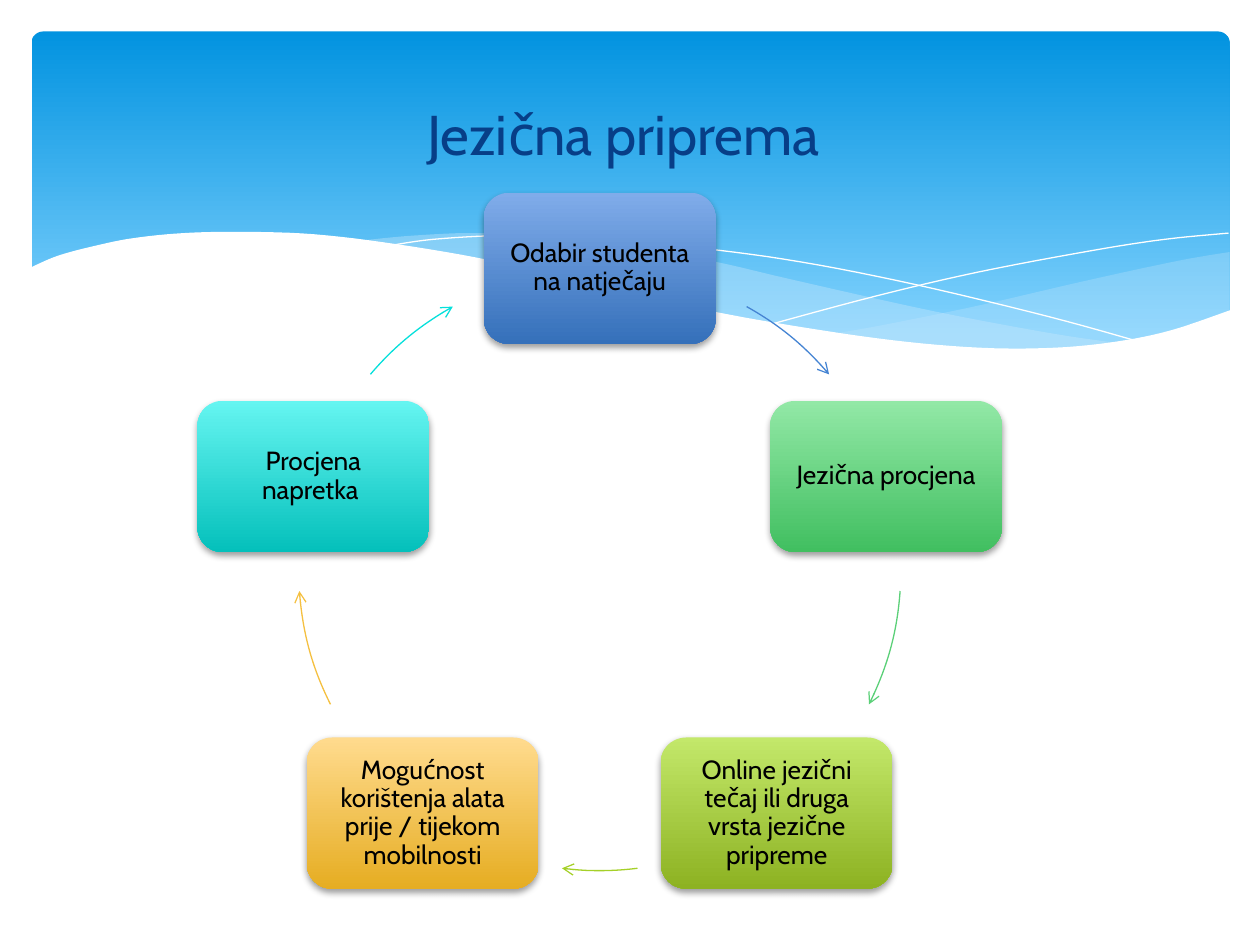
from math import cos, radians, sin

from lxml import etree
from pptx import Presentation
from pptx import util as u
from pptx.dml.color import RGBColor
from pptx.enum import shapes, text
from pptx.oxml.ns import qn

PX = 9144
FONT = "Cabin"
COLORS = {
    "sky": "0293E0", "haze": "83D3FE", "mist": "C6E7FC", "white": "FFFFFF",
    "navy": "073E87", "black": "000000",
}
MID = (476, 452)
RADIUS = 239
BOX = (184, 120)
STEPS = [
    ("Odabir studenta na natječaju", "80ACEA", "3570BA", "4584D3", (29.2, 49.6)),
    ("Jezična procjena", "92E8A6", "41BF60", "5BD078", (94.1, 116.6)),
    ("Online jezični tečaj ili druga vrsta jezične pripreme",
     "C3E86A", "8DB222", "A5D028", (172.8, 187.2)),
    ("Mogućnost korištenja alata prije / tijekom mobilnosti",
     "FFDB8E", "E6AD22", "F5C040", (243.4, 265.9)),
    ("Procjena napretka ", "65F5F1", "04C0BB", "05E0DB", (310.4, 330.8)),
]
EAST = [
    [(976, 200), (935, 207), (861, 223), (779, 242), (706, 257), (661, 265)],
    [(661, 265), (705, 271), (757, 275), (803, 278), (854, 276), (897, 270),
     (935, 262), (976, 247)],
]
WEST = [
    [(893, 273), (837, 265), (741, 247), (629, 222), (569, 208), (502, 196),
     (442, 189), (380, 185), (328, 187), (286, 191)],
    [(286, 191), (342, 199), (404, 211), (491, 232), (584, 252), (650, 264),
     (722, 274), (785, 278), (838, 278), (893, 273)],
]
FALL = [(309, 195), (344, 190), (401, 187), (469, 189), (556, 197), (636, 208),
        (727, 226), (831, 251), (907, 272)]
RISE = [(613, 257), (695, 235), (776, 216), (866, 199), (924, 190), (975, 185)]
CREST = [
    [(977, 246), (930, 262), (887, 271), (837, 276), (778, 276), (708, 270),
     (626, 258), (555, 245), (475, 227), (391, 207), (316, 194), (250, 186),
     (193, 184), (146, 185), (106, 189), (76, 195), (46, 203), (23, 213)],
    [(23, 329), (977, 329)],
]


def rgb(hue):
    """Return the colour of a hex string."""
    return RGBColor.from_string(hue)


def shade(shape, top, end, stop=1.0):
    """Fill a shape from top to bottom with two colours."""
    fill = shape.fill
    fill.gradient()
    fill.gradient_angle = 270
    for item, hue, pos in zip(fill.gradient_stops, (top, end), (0, stop)):
        item.color.rgb = rgb(hue)
        item.position = pos
    shape.line.fill.background()


def smooth(pts, cuts=6):
    """Return a Catmull-Rom curve through the points."""
    ring = [pts[0], *pts, pts[-1]]
    path = [pts[0]]
    for a, b, c, d in zip(ring, ring[1:], ring[2:], ring[3:]):
        for k in range(1, cuts + 1):
            t = k / cuts
            path.append(tuple(
                0.5 * (2 * q + (r - p) * t + (2 * p - 5 * q + 4 * r - s) * t ** 2
                       + (3 * q - p - 3 * r + s) * t ** 3)
                for p, q, r, s in zip(a, b, c, d)))
    return path


def trace(slide, parts, closed):
    """Draw a freeform along smooth parts."""
    path = [(x * PX, y * PX) for part in parts for x, y in smooth(part)]
    pen = slide.shapes.build_freeform(*path[0])
    pen.add_line_segments(path[1:], close=closed)
    shape = pen.convert_to_shape()
    shape.shadow.inherit = False
    return shape


def wave(slide, parts, hue, alpha=100):
    """Add a filled wave."""
    shape = trace(slide, parts, True)
    shape.line.fill.background()
    shape.fill.solid()
    shape.fill.fore_color.rgb = rgb(hue)
    tint = shape._element.spPr.find(qn("a:solidFill"))[0]
    etree.SubElement(tint, qn("a:alpha"), val=str(alpha * 1000))


def thread(slide, pts):
    """Add a white hairline."""
    shape = trace(slide, [pts], False)
    shape.fill.background()
    shape.line.color.rgb = rgb(COLORS["white"])
    shape.line.width = u.Pt(0)


def preset(slide, kind, x, y, w, h):
    """Add a preset shape without the theme shadow."""
    shape = slide.shapes.add_shape(kind, *(round(v * PX) for v in (x, y, w, h)))
    shape.shadow.inherit = False
    return shape


def banner(slide):
    """Add the sky with its waves."""
    sky = preset(slide, shapes.MSO_SHAPE.ROUNDED_RECTANGLE, 25, 25, 951, 270)
    sky.adjustments[0] = 0.034
    shade(sky, COLORS["sky"], COLORS["haze"], 0.9)
    wave(slide, EAST, COLORS["mist"], 29)
    wave(slide, WEST, COLORS["mist"], 40)
    thread(slide, FALL)
    thread(slide, RISE)
    wave(slide, CREST, COLORS["white"])


def write(shape, words, size, hue, pad):
    """Write one centred paragraph."""
    frame = shape.text_frame
    frame.word_wrap = True
    frame.vertical_anchor = text.MSO_ANCHOR.MIDDLE
    frame.margin_left = frame.margin_right = pad[0] * PX
    frame.margin_top = frame.margin_bottom = pad[1] * PX
    para = frame.paragraphs[0]
    para.alignment = text.PP_ALIGN.CENTER
    run = para.add_run()
    run.text = words
    run.font.name = FONT
    run.font.size = u.Pt(size)
    run.font.color.rgb = rgb(hue)
    return para


def head(slide, words):
    """Set the title above the banner."""
    title = slide.shapes.title
    title._element.getparent().append(title._element)
    title.left, title.top = 50 * PX, 37 * PX
    title.width, title.height = 900 * PX, 137 * PX
    write(title, words, 32, COLORS["navy"], (10, 5))


def glow(shape):
    """Give a shape a soft drop shadow."""
    fx = shape._element.spPr.find(qn("a:effectLst"))
    cast = etree.SubElement(
        fx, qn("a:outerShdw"), blurRad=str(u.Pt(4)), dist=str(u.Pt(2)),
        dir="5400000", rotWithShape="0")
    tint = etree.SubElement(cast, qn("a:srgbClr"), val=COLORS["black"])
    etree.SubElement(tint, qn("a:alpha"), val="38000")


def card(slide, turn, words, top, end):
    """Add one step at its angle on the ring."""
    x = MID[0] + RADIUS * sin(radians(turn)) - BOX[0] / 2
    y = MID[1] - RADIUS * cos(radians(turn)) - BOX[1] / 2
    shape = preset(slide, shapes.MSO_SHAPE.ROUNDED_RECTANGLE, x, y, *BOX)
    shade(shape, top, end)
    glow(shape)
    para = write(shape, words, 15, COLORS["black"], (12, 12))
    para.line_spacing = 0.9


def arrow(slide, span, hue):
    """Add an arc with an arrowhead along the ring."""
    shape = preset(slide, shapes.MSO_SHAPE.ARC, MID[0] - RADIUS, MID[1] - RADIUS,
                   2 * RADIUS, 2 * RADIUS)
    for i, turn in enumerate(span):
        shape.adjustments[i] = (turn - 90) % 360 * 0.6
    shape.fill.background()
    shape.line.color.rgb = rgb(hue)
    shape.line.width = u.Pt(0.75)
    etree.SubElement(shape.line._get_or_add_ln(), qn("a:tailEnd"), type="arrow")


def main():
    """Build the slide."""
    deck = Presentation()
    deck.slide_width, deck.slide_height = 1000 * PX, 750 * PX
    slide = deck.slides.add_slide(deck.slide_layouts[5])
    banner(slide)
    head(slide, "Jezična priprema ")
    for i, (words, top, end, hue, span) in enumerate(STEPS):
        card(slide, i * 360 / len(STEPS), words, top, end)
        arrow(slide, span, hue)
    deck.save("out.pptx")


if __name__ == "__main__":
    main()
